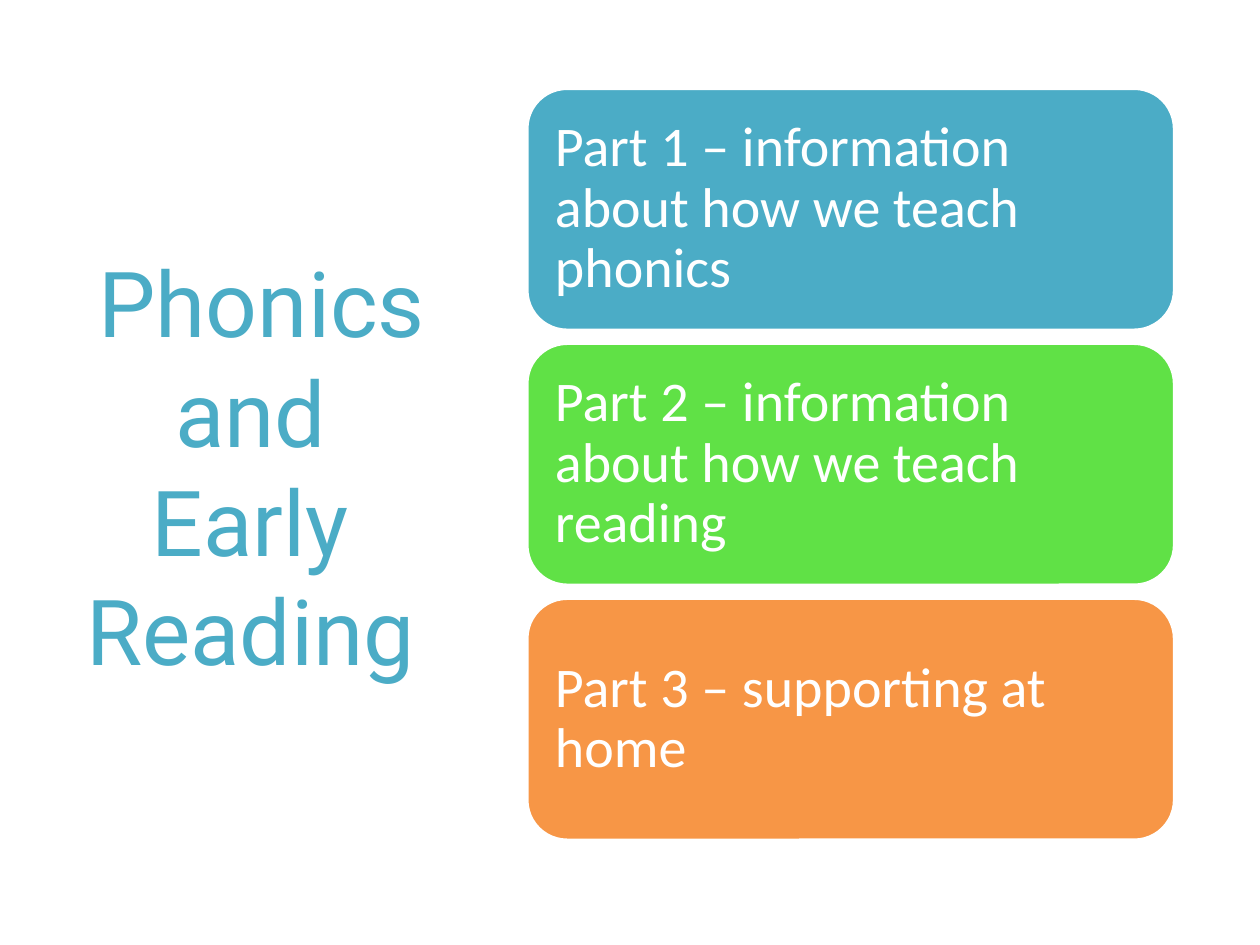
"""Build a slide that introduces the three parts of a phonics talk."""
from dataclasses import dataclass

from pptx import Presentation
from pptx.dml.color import RGBColor
from pptx.enum.shapes import MSO_SHAPE
from pptx.enum.text import MSO_ANCHOR, MSO_AUTO_SIZE, PP_ALIGN
from pptx.slide import Slide
from pptx.text.text import TextFrame
from pptx.util import Cm, Pt

COLORS = {"teal": "4BACC6", "green": "60E146", "orange": "F79646", "white": "FFFFFF"}
LEFT, TOP, WIDTH, HEIGHT, PITCH = 10.62, 1.78, 13.06, 4.88, 5.14


@dataclass
class Part:
    text: str
    color: str


PARTS = [
    Part("Part 1 – information about how we teach phonics", "teal"),
    Part("Part 2 – information about how we teach reading", "green"),
    Part("Part 3 – supporting at home", "orange"),
]


def rgb(name: str) -> RGBColor:
    return RGBColor.from_string(COLORS[name])


def set_text(tf: TextFrame, text: str, font: str, size: int, color: str, align: PP_ALIGN) -> None:
    tf.text = text
    tf.word_wrap = True
    tf.auto_size = MSO_AUTO_SIZE.NONE
    tf.vertical_anchor = MSO_ANCHOR.MIDDLE
    p = tf.paragraphs[0]
    p.alignment = align
    p.font.name = font
    p.font.size = Pt(size)
    p.font.color.rgb = rgb(color)


def add_title(s: Slide, text: str) -> None:
    sp = s.shapes.title
    sp.left, sp.top, sp.width, sp.height = Cm(1.1), Cm(1.73), Cm(7.9), Cm(15.3)
    set_text(sp.text_frame, text, "Roboto", 52, "teal", PP_ALIGN.CENTER)


def add_part(s: Slide, part: Part, top: float) -> None:
    sp = s.shapes.add_shape(
        MSO_SHAPE.ROUNDED_RECTANGLE, Cm(LEFT), Cm(top), Cm(WIDTH), Cm(HEIGHT)
    )
    sp.shadow.inherit = False
    sp.fill.solid()
    sp.fill.fore_color.rgb = rgb(part.color)
    sp.line.color.rgb = rgb("white")
    sp.line.width = Pt(2)
    tf = sp.text_frame
    tf.margin_left = tf.margin_right = tf.margin_top = tf.margin_bottom = Cm(0.33)
    set_text(tf, part.text, "Calibri", 32, "white", PP_ALIGN.LEFT)
    tf.paragraphs[0].line_spacing = 0.9


def main() -> None:
    prs = Presentation()
    prs.slide_width, prs.slide_height = Cm(25.4), Cm(19.05)
    s = prs.slides.add_slide(prs.slide_layouts[5])
    add_title(s, " Phonics and Early Reading")
    for i, part in enumerate(PARTS):
        add_part(s, part, TOP + i * PITCH)
    prs.save("out.pptx")


if __name__ == "__main__":
    main()
